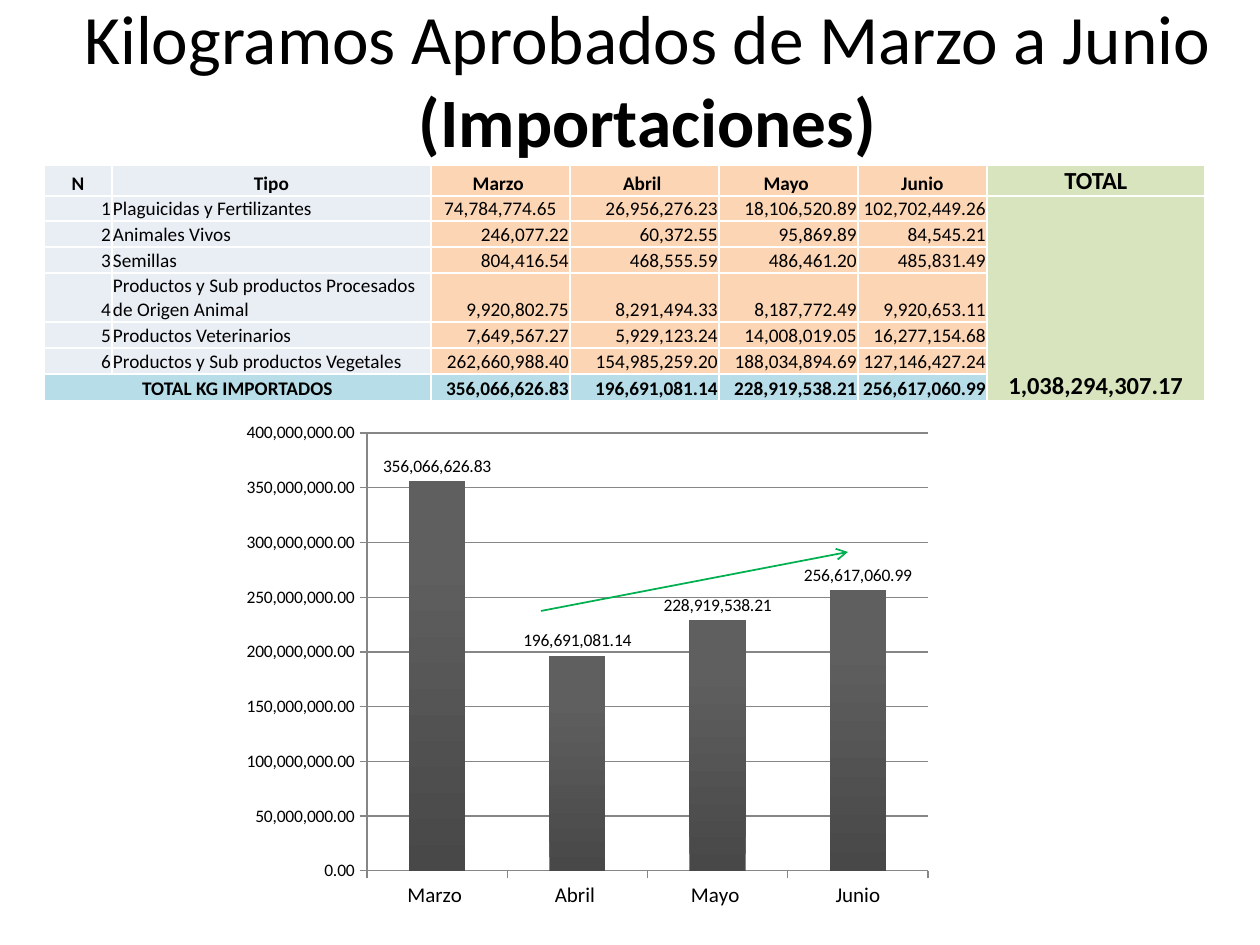
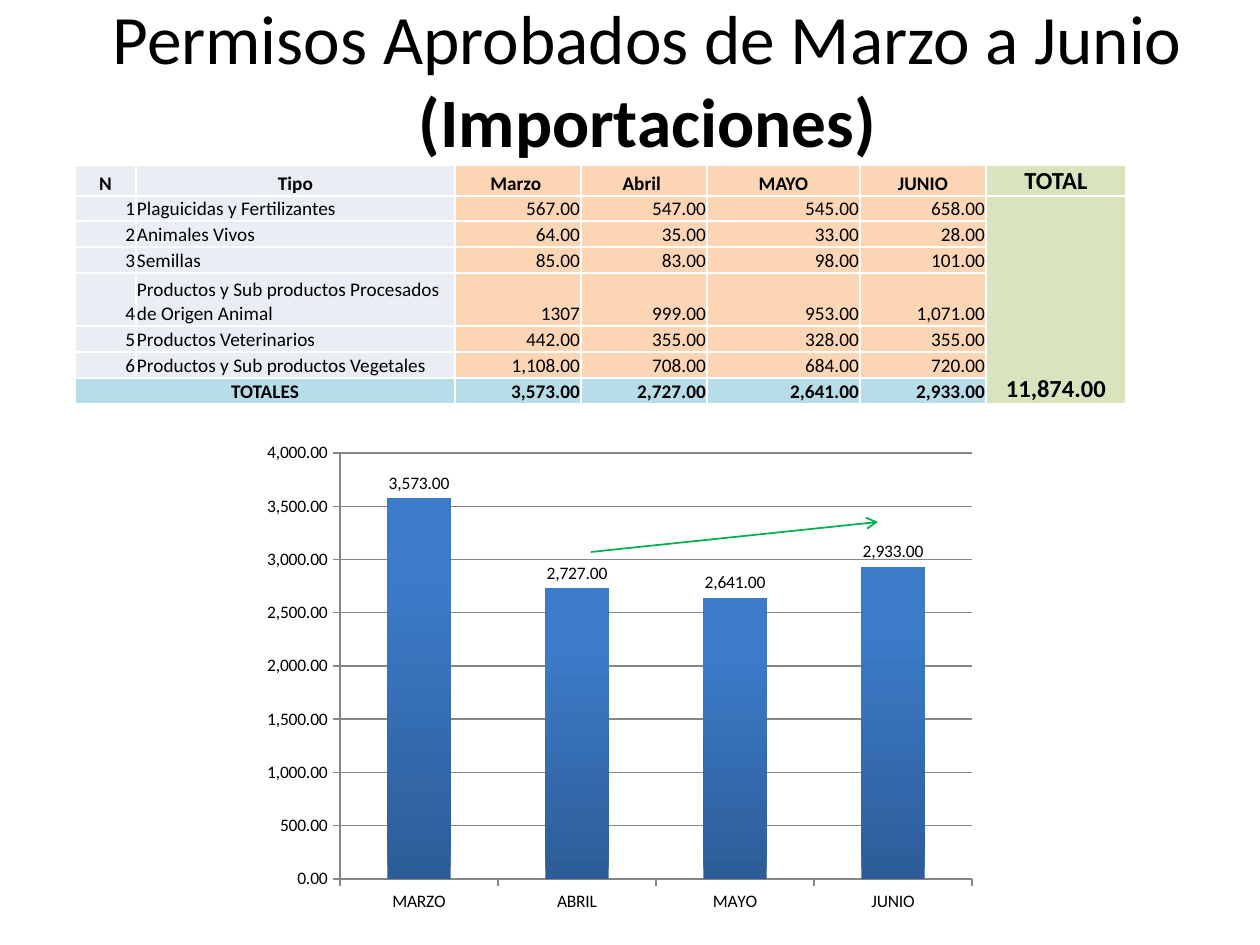
"""Build two slides on approved imports, each with a table, a column chart and a trend arrow."""
import lxml.etree
import pptx
import pptx.chart.data
import pptx.dml.color
import pptx.enum.chart
import pptx.enum.shapes
import pptx.enum.text
import pptx.oxml
import pptx.oxml.ns
import pptx.util

RGBColor = pptx.dml.color.RGBColor
BLACK = RGBColor(0x00, 0x00, 0x00)
LAVENDER = RGBColor(0xE9, 0xED, 0xF4)
PEACH = RGBColor(0xFC, 0xD5, 0xB5)
OLIVE = RGBColor(0xD7, 0xE4, 0xBD)
AQUA = RGBColor(0xB7, 0xDE, 0xE8)
GREEN = RGBColor(0x00, 0xB0, 0x50)
GRID_GRAY = RGBColor(0x86, 0x86, 0x86)
DARK_GRAY, MID_GRAY = RGBColor(0x48, 0x48, 0x48), RGBColor(0x5F, 0x5F, 0x5F)
DARK_BLUE, MID_BLUE = RGBColor(0x2D, 0x5D, 0x98), RGBColor(0x3C, 0x7B, 0xC9)

FONT = "Calibri"
NUMBER_FORMAT = "#,##0.00"
ALIGN = pptx.enum.text.PP_ALIGN
BOTTOM = pptx.enum.text.MSO_ANCHOR.BOTTOM
TITLE_BOX = (35, 0, 1225, 157)
TABLE_TOP = 165

PRODUCT_TYPES = [
    "Plaguicidas y Fertilizantes",
    "Animales Vivos",
    "Semillas",
    "Productos y Sub productos Procesados de Origen Animal",
    "Productos Veterinarios",
    "Productos y Sub productos Vegetales",
]

REPORTS = [
    {
        "title": "Kilogramos Aprobados de Marzo a Junio ",
        "months": ["Marzo ", "Abril ", "Mayo ", "Junio"],
        "amounts": [
            ["74,784,774.65", "26,956,276.23", "18,106,520.89", "102,702,449.26"],
            ["246,077.22", "60,372.55", "95,869.89", "84,545.21"],
            ["804,416.54", "468,555.59", "486,461.20", "485,831.49"],
            ["9,920,802.75", "8,291,494.33", "8,187,772.49", "9,920,653.11"],
            ["7,649,567.27", "5,929,123.24", "14,008,019.05", "16,277,154.68"],
            ["262,660,988.40", "154,985,259.20", "188,034,894.69", "127,146,427.24"],
        ],
        "totals_label": "TOTAL KG IMPORTADOS",
        "totals": ["356,066,626.83", "196,691,081.14", "228,919,538.21", "256,617,060.99"],
        "grand_total": "1,038,294,307.17",
        "centred_cells": [(1, 2)],
        "table_left": 44,
        "columns": [68, 319, 139, 149, 139, 129, 218],
        "rows": [31, 25, 26, 26, 49, 26, 26, 27],
        "categories": ["Marzo ", "Abril ", "Mayo ", "Junio"],
        "chart_box": (233, 413, 709, 507),
        "plot_box": (367, 433, 561, 438),
        "scale": (400_000_000, 50_000_000),
        "category_size": 12,
        "bar_colors": (DARK_GRAY, MID_GRAY),
        "arrow": (541, 611, 848, 552),
    },
    {
        "title": "Permisos Aprobados de Marzo a Junio ",
        "months": ["Marzo ", "Abril ", "MAYO", "JUNIO"],
        "amounts": [
            ["567.00", "547.00", "545.00", "658.00"],
            ["64.00", "35.00", "33.00", "28.00"],
            ["85.00", "83.00", "98.00", "101.00"],
            ["1307", "999.00", "953.00", "1,071.00"],
            ["442.00", "355.00", "328.00", "355.00"],
            ["1,108.00", "708.00", "684.00", "720.00"],
        ],
        "totals_label": "TOTALES",
        "totals": ["3,573.00", "2,727.00", "2,641.00", "2,933.00"],
        "grand_total": "11,874.00",
        "centred_cells": [],
        "table_left": 75,
        "columns": [61, 319, 126, 126, 153, 126, 140],
        "rows": [31, 25, 26, 26, 53, 26, 26, 26],
        "categories": ["MARZO", "ABRIL", "MAYO", "JUNIO"],
        "chart_box": (253, 433, 735, 488),
        "plot_box": (340, 453, 632, 426),
        "scale": (4000, 500),
        "category_size": 10,
        "bar_colors": (DARK_BLUE, MID_BLUE),
        "arrow": (591, 552, 878, 522),
    },
]


def px(length):
    """Turn pixels into EMU."""
    return pptx.util.Emu(round(length * 914400 / 126))


def apply(target, values):
    """Set each attribute of a target from a dict."""
    for name, value in values.items():
        setattr(target, name, value)


def set_font(font, size, bold=False):
    """Give a font the shared face and colour."""
    apply(font, {"name": FONT, "size": pptx.util.Pt(size), "bold": bold})
    font.color.rgb = BLACK


def add_title(page, text):
    """Fill the title placeholder with a plain and a bold part."""
    box = page.shapes.title
    apply(box, dict(zip(("left", "top", "width", "height"), map(px, TITLE_BOX))))
    frame = box.text_frame
    apply(frame, {
        "word_wrap": True,
        "auto_size": pptx.enum.text.MSO_AUTO_SIZE.NONE,
        "vertical_anchor": pptx.enum.text.MSO_ANCHOR.MIDDLE,
    })
    para = frame.paragraphs[0]
    para.alignment = ALIGN.CENTER
    for part, bold in ((text, False), ("(Importaciones)", True)):
        span = para.add_run()
        span.text = part
        set_font(span.font, 39.6, bold)


def add_borders(cell):
    """Draw thin white borders on a cell."""
    properties = cell._tc.get_or_add_tcPr()
    for side in ("lnL", "lnR", "lnT", "lnB"):
        properties.append(pptx.oxml.parse_xml(
            f'<a:{side} {pptx.oxml.ns.nsdecls("a")} w="12700"><a:solidFill>'
            f'<a:srgbClr val="FFFFFF"/></a:solidFill></a:{side}>'))


def cell_fill(row, column, last_row):
    """Choose the colour of a cell by its place."""
    if column == 6:
        return OLIVE
    if row == last_row:
        return AQUA
    return LAVENDER if column < 2 else PEACH


def cell_alignment(row, column, last_row, centred_cells):
    """Choose the alignment of a cell by its place."""
    is_label = column < 2 and row == last_row
    if row == 0 or column == 6 or is_label or (row, column) in centred_cells:
        return ALIGN.CENTER
    return ALIGN.LEFT if column == 1 else ALIGN.RIGHT


def add_report_table(page, report):
    """Add the table of product types by month."""
    lines = [["N", "Tipo", *report["months"], "TOTAL"]]
    for number, (kind, amounts) in enumerate(zip(PRODUCT_TYPES, report["amounts"]), 1):
        lines.append([str(number), kind, *amounts, ""])
    lines[1][-1] = report["grand_total"]
    lines.append([report["totals_label"], "", *report["totals"], ""])
    last_row = len(lines) - 1
    widths, heights = report["columns"], report["rows"]
    table = page.shapes.add_table(
        len(lines), len(widths), px(report["table_left"]), px(TABLE_TOP),
        px(sum(widths)), px(sum(heights))).table
    apply(table, {"first_row": False, "horz_banding": False})
    for column, width in zip(table.columns, widths):
        column.width = px(width)
    for row, height in zip(table.rows, heights):
        row.height = px(height)
    table.cell(1, 6).merge(table.cell(last_row, 6))
    table.cell(last_row, 0).merge(table.cell(last_row, 1))
    for row, line in enumerate(lines):
        for column, text in enumerate(line):
            cell = table.cell(row, column)
            apply(cell, {
                "margin_left": px(1), "margin_right": px(1), "margin_top": px(1),
                "margin_bottom": 0, "vertical_anchor": BOTTOM,
            })
            add_borders(cell)
            cell.fill.solid()
            cell.fill.fore_color.rgb = cell_fill(row, column, last_row)
            para = cell.text_frame.paragraphs[0]
            para.alignment = cell_alignment(row, column, last_row, report["centred_cells"])
            if text:
                span = para.add_run()
                span.text = text
                bold = row in (0, last_row) or column == 6
                set_font(span.font, 14 if column == 6 else 11, bold)


def place_plot(chart, chart_box, plot_box):
    """Fix the inner plot area inside the chart frame."""
    left, top, width, height = chart_box
    fractions = {
        "x": (plot_box[0] - left) / width, "y": (plot_box[1] - top) / height,
        "w": plot_box[2] / width, "h": plot_box[3] / height,
    }
    qn = pptx.oxml.ns.qn
    area = chart.element.find(".//" + qn("c:plotArea"))
    for old_layout in area.findall(qn("c:layout")):
        area.remove(old_layout)
    layout = pptx.oxml.parse_xml(
        f'<c:layout {pptx.oxml.ns.nsdecls("c")}><c:manualLayout>'
        '<c:layoutTarget val="inner"/><c:xMode val="edge"/><c:yMode val="edge"/>'
        + "".join(f'<c:{name} val="{value:.4f}"/>' for name, value in fractions.items())
        + "</c:manualLayout></c:layout>")
    area.insert(0, layout)


def add_totals_chart(page, report):
    """Add the column chart of monthly totals."""
    data = pptx.chart.data.CategoryChartData(number_format=NUMBER_FORMAT)
    data.categories = report["categories"]
    data.add_series("Series 1", [float(text.replace(",", "")) for text in report["totals"]])
    chart = page.shapes.add_chart(
        pptx.enum.chart.XL_CHART_TYPE.COLUMN_CLUSTERED,
        *map(px, report["chart_box"]), data).chart
    apply(chart, {"has_title": False, "has_legend": False})
    set_font(chart.font, 10)
    place_plot(chart, report["chart_box"], report["plot_box"])

    maximum, step = report["scale"]
    value_axis, category_axis = chart.value_axis, chart.category_axis
    apply(value_axis, {
        "minimum_scale": 0, "maximum_scale": maximum, "major_unit": step,
        "has_major_gridlines": True,
    })
    set_font(category_axis.tick_labels.font, report["category_size"])
    for axis_part in (value_axis, category_axis, value_axis.major_gridlines):
        axis_part.format.line.color.rgb = GRID_GRAY
        axis_part.format.line.width = pptx.util.Pt(0.75)

    plot = chart.plots[0]
    apply(plot, {"gap_width": 150, "vary_by_categories": False, "has_data_labels": True})
    numbers = {"number_format": NUMBER_FORMAT, "number_format_is_linked": False}
    apply(value_axis.tick_labels, numbers)
    apply(plot.data_labels, {
        **numbers, "show_value": True,
        "position": pptx.enum.chart.XL_LABEL_POSITION.OUTSIDE_END,
    })
    fill = plot.series[0].format.fill
    fill.gradient()
    fill.gradient_angle = 90
    for stop, color, position in zip(fill.gradient_stops, report["bar_colors"], (0, 0.8)):
        stop.color.rgb = color
        stop.position = position


def add_trend_arrow(page, ends):
    """Add the green arrow over the columns."""
    arrow = page.shapes.add_connector(
        pptx.enum.shapes.MSO_CONNECTOR.STRAIGHT, *map(px, ends))
    arrow.line.color.rgb = GREEN
    arrow.line.width = pptx.util.Pt(1)
    qn = pptx.oxml.ns.qn
    properties = arrow.element.spPr
    lxml.etree.SubElement(properties.find(qn("a:ln")), qn("a:tailEnd"), type="arrow")
    lxml.etree.SubElement(properties, qn("a:effectLst"))


def main():
    """Build and save the deck."""
    deck = pptx.Presentation()
    apply(deck, {"slide_width": px(1260), "slide_height": px(945)})
    for report in REPORTS:
        page = deck.slides.add_slide(deck.slide_layouts.get_by_name("Title Only"))
        add_title(page, report["title"])
        add_report_table(page, report)
        add_totals_chart(page, report)
        add_trend_arrow(page, report["arrow"])
    deck.save("out.pptx")


if __name__ == "__main__":
    main()
